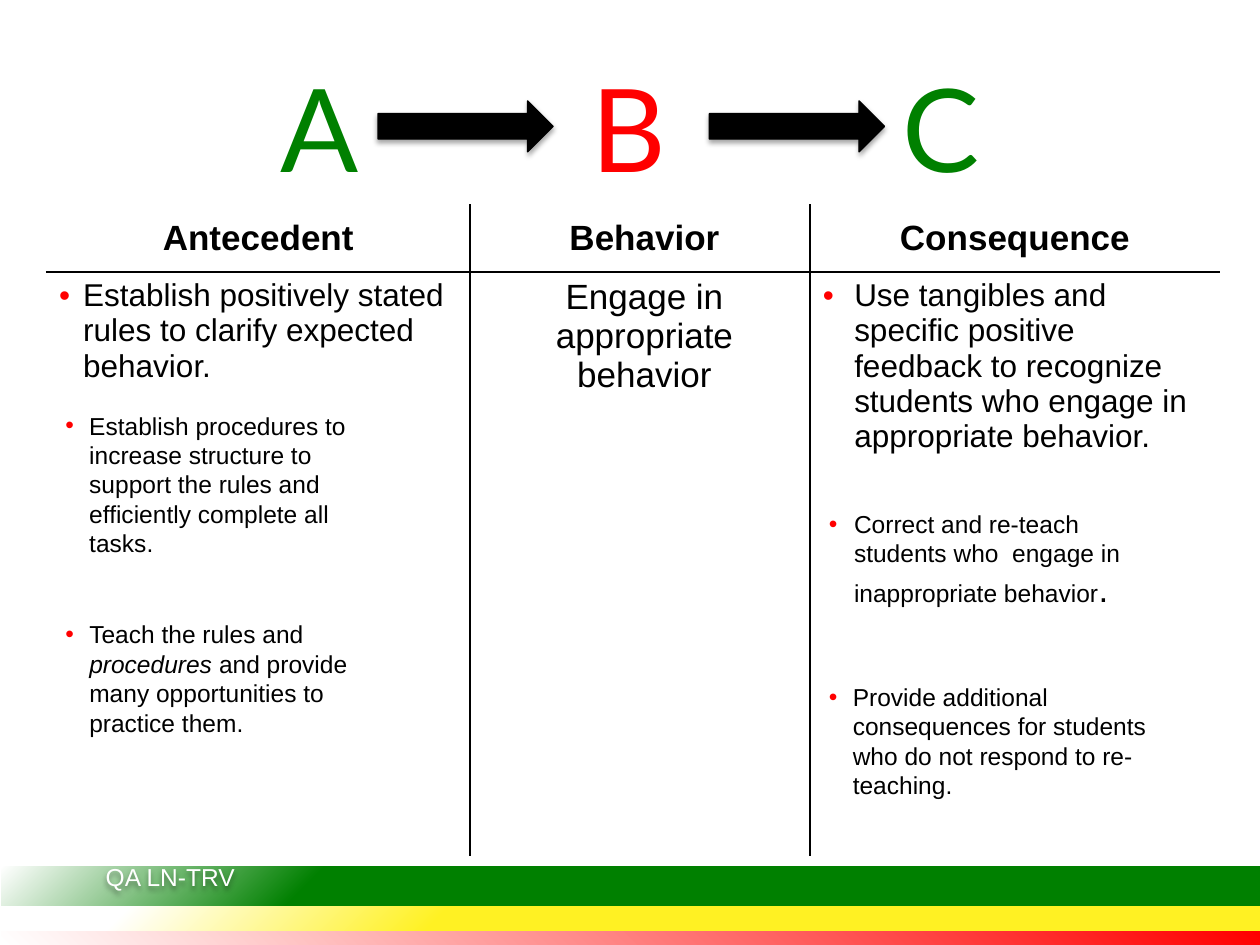
import pptx
import pptx.util
import pptx.dml.color
import pptx.enum.shapes
import pptx.enum.text
import pptx.oxml.ns
from dataclasses import dataclass
from lxml import etree

qn = pptx.oxml.ns.qn
Pt = pptx.util.Pt
Inches = pptx.util.Inches
ALIGN = pptx.enum.text.PP_ALIGN
ANCHOR = pptx.enum.text.MSO_ANCHOR
SHAPE = pptx.enum.shapes.MSO_SHAPE


@dataclass(frozen=True)
class Theme:
    green: str = "008000"
    red: str = "FF0000"
    yellow: str = "FFF123"
    black: str = "000000"
    white: str = "FFFFFF"
    display: str = "Lato"
    body: str = "Arial"
    letter: int = 66
    heading: int = 20
    main: int = 18
    detail: int = 14


T = Theme()
WIDTH, HEIGHT = Inches(10), Inches(7.5)


def place(left, top, width, height):
    """Turn percentages of the slide into a position and size."""
    shares = zip((left, top, width, height), (WIDTH, HEIGHT, WIDTH, HEIGHT))
    return [round(share * full / 100) for share, full in shares]


def rgb(color):
    return pptx.dml.color.RGBColor.from_string(color)


def child(parent, tag, **attributes):
    values = {name: str(value) for name, value in attributes.items()}
    return etree.SubElement(parent, qn(tag), values)


def add_run(p, text, size, color=T.black, font=T.body):
    r = p.add_run()
    r.text = text
    r.font.size, r.font.name = Pt(size), font
    r.font.color.rgb = rgb(color)
    return r


def add_bullet(p, indent):
    pPr = p._p.get_or_add_pPr()
    pPr.set("marL", str(Inches(indent)))
    pPr.set("indent", str(-Inches(indent)))
    child(child(pPr, "a:buClr"), "a:srgbClr", val=T.red)
    child(pPr, "a:buFont", typeface=T.body)
    child(pPr, "a:buChar", char="•")


def add_shadow(s):
    effects = child(s._element.spPr, "a:effectLst")
    shadow = child(effects, "a:outerShdw", blurRad=Pt(3.1), dist=Pt(1.8),
                   dir=5400000, rotWithShape=0)
    color = child(shadow, "a:srgbClr", val=T.black)
    child(color, "a:alpha", val=35000)


def add_text(slide, box):
    s = slide.shapes.add_textbox(*place(*box))
    s.text_frame.word_wrap = True
    return s


def add_title(slide):
    tf = add_text(slide, (5, 5, 90, 16.67)).text_frame
    tf.vertical_anchor = ANCHOR.MIDDLE
    p = tf.paragraphs[0]
    tabs = child(p._p.get_or_add_pPr(), "a:tabLst")
    for letter, color, stop in (("A", T.green, 1.94), ("B", T.red, 4.39),
                                ("C", T.green, 6.87)):
        child(tabs, "a:tab", pos=Inches(stop), algn="ctr")
        add_run(p, "\t" + letter, T.letter, color, T.display)


def add_arrow(slide, left):
    s = slide.shapes.add_shape(SHAPE.RIGHT_ARROW, *place(left, 10.67, 13.9, 5.4))
    s.fill.solid()
    s.fill.fore_color.rgb = rgb(T.black)
    s.line.color.rgb = rgb(T.black)
    s.line.width = Pt(0.75)
    add_shadow(s)


def add_bar(slide, top, height, stops, focus):
    """Draw a footer stripe that fades out from its right-hand corner."""
    s = slide.shapes.add_shape(SHAPE.RECTANGLE, *place(0.1, top, 100, height))
    s.shadow.inherit = False
    s.line.fill.background()
    s.fill.gradient()
    grad = s._element.spPr.find(qn("a:gradFill"))
    for old in list(grad):
        grad.remove(old)
    stop_list = child(grad, "a:gsLst")
    for position, color in stops:
        stop = child(stop_list, "a:gs", pos=position * 1000)
        child(stop, "a:srgbClr", val=color)
    path = child(grad, "a:path", path="circle")
    child(path, "a:fillToRect", **{side: 100000 for side in focus})


def add_borders(cell, row, col):
    """Rule the inner edges in black and the outer edges in white."""
    inner = {"a:lnL": col > 0, "a:lnR": col < 2,
             "a:lnT": row > 0, "a:lnB": row < 1}
    tcPr = cell._tc.get_or_add_tcPr()
    for position, (tag, ruled) in enumerate(inner.items()):
        line = tcPr.makeelement(qn(tag), {"w": str(Pt(1))})
        fill = child(line, "a:solidFill")
        child(fill, "a:srgbClr", val=T.black if ruled else T.white)
        tcPr.insert(position, line)


def add_abc_table(slide):
    rows = (
        ("Antecedent", "Behavior", "Consequence"),
        ("Establish positively stated rules to clarify expected behavior.",
         "Engage in appropriate behavior",
         "Use tangibles and specific positive feedback to recognize students "
         "who engage in appropriate behavior."),
    )
    frame = slide.shapes.add_table(2, 3, *place(3.7, 21.7, 93.1, 68.9))
    table = frame.table
    for column, width in zip(table.columns, (3.36, 2.7, 3.25)):
        column.width = Inches(width)
    for row, height in zip(table.rows, (0.53, 4.64)):
        row.height = Inches(height)
    for i, texts in enumerate(rows):
        for j, text in enumerate(texts):
            cell = table.cell(i, j)
            cell.fill.background()
            add_borders(cell, i, j)
            p = cell.text_frame.paragraphs[0]
            bulleted = i == 1 and j != 1
            r = add_run(p, text, T.main if bulleted else T.heading)
            r.font.bold = i == 0
            if i == 0:
                cell.vertical_anchor = ANCHOR.MIDDLE
            if bulleted:
                add_bullet(p, 0.19 if j == 0 else 0.25)
            else:
                p.alignment = ALIGN.CENTER
                if j == 1:
                    p._p.get_or_add_pPr().set("marL", str(Inches(0.07)))


def add_detail(slide, box, parts, indent=0.19):
    p = add_text(slide, box).text_frame.paragraphs[0]
    add_bullet(p, indent)
    for text, size, italic in parts:
        add_run(p, text, size).font.italic = italic


def main():
    prs = pptx.Presentation()
    prs.slide_width, prs.slide_height = WIDTH, HEIGHT
    slide = prs.slides.add_slide(prs.slide_layouts[6])

    # Heading letters and the table below them
    add_title(slide)
    add_abc_table(slide)

    # Footer stripes and label
    add_bar(slide, 98.5, 1.6, ((0, T.red), (100, T.white)), "lb")
    add_bar(slide, 91.7, 4.2, ((75, T.green), (100, T.white)), "lt")
    add_bar(slide, 95.9, 2.6, ((65, T.yellow), (90, T.white)), "lt")
    label = add_text(slide, (7.4, 90.6, 19.2, 5.4))
    add_run(label.text_frame.paragraphs[0], "QA LN-TRV", T.detail, T.white)
    add_shadow(label)

    # Arrows between the letters
    for left in (30, 56.3):
        add_arrow(slide, left)

    # Further points under the consequence and antecedent columns
    add_detail(slide, (64.8, 53.2, 28.3, 22), (
        ("Correct and re-teach students who  engage in inappropriate behavior",
         T.detail, False), (".", T.heading, False)), 0.2)
    add_detail(slide, (64.8, 71.5, 28.3, 17.5), (
        ("Provide additional consequences for students who do not respond "
         "to re-teaching.", T.detail, False),))
    add_detail(slide, (4.2, 42.8, 27.6, 25.6), (
        ("Establish procedures to increase structure to support the rules and "
         "efficiently complete all tasks.", T.detail, False),))
    add_detail(slide, (4.2, 64.9, 25.1, 25.6), (
        ("Teach the rules and ", T.detail, False),
        ("procedures", T.detail, True),
        (" and provide many opportunities to practice them.", T.detail, False)))

    prs.save("out.pptx")


if __name__ == "__main__":
    main()
